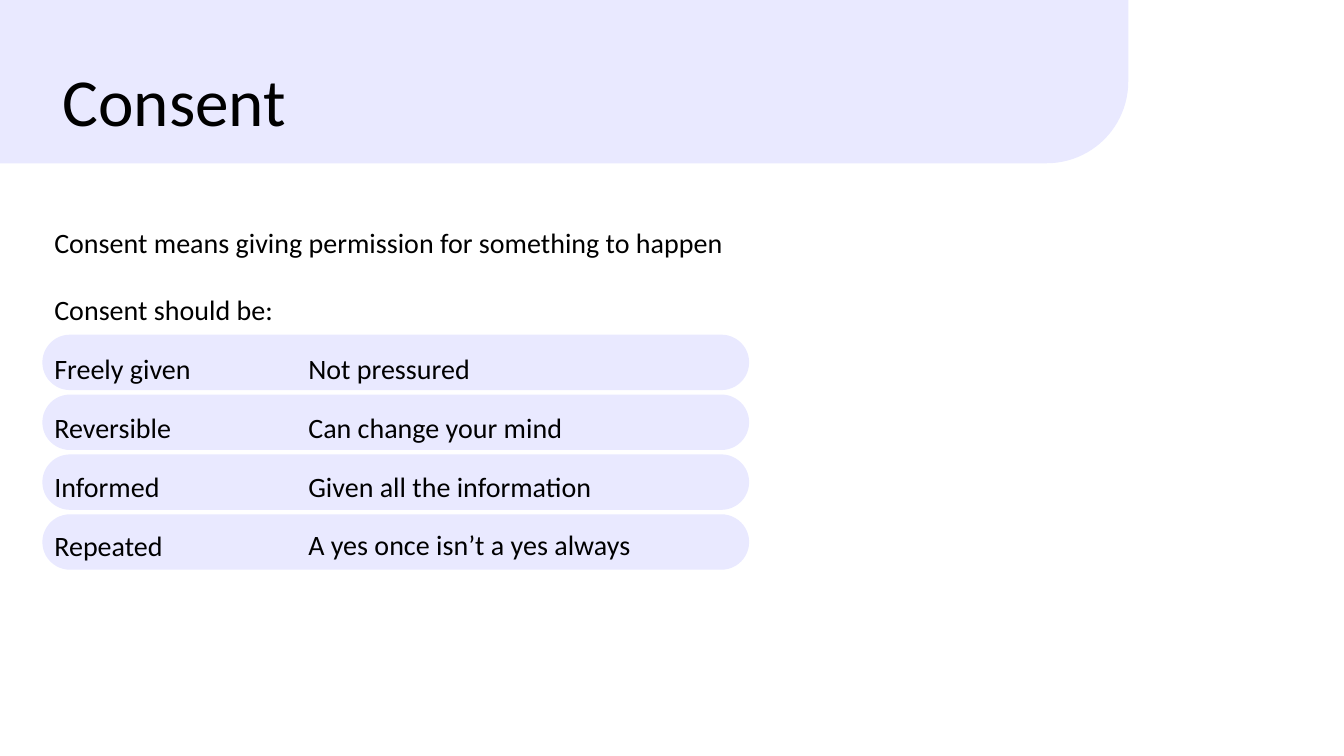
from pptx import Presentation
from pptx.dml.color import RGBColor
from pptx.enum import shapes, text
from pptx.util import Inches, Pt

LAVENDER = "E9E9FF"
BLACK = "000000"
FONT = "Calibri"

QUALITIES = [
    ("Freely given", "Not pressured"),
    ("Reversible", "Can change your mind"),
    ("Informed", "Given all the information"),
    ("Repeated", "A yes once isn’t a yes always"),
]


def color(hex_string):
    return RGBColor.from_string(hex_string)


def place(item, left, top, width, height):
    item.left, item.top = Inches(left), Inches(top)
    item.width, item.height = Inches(width), Inches(height)


def add_panel(slide, preset, left, top, width, height):
    panel = slide.shapes.add_shape(
        preset, Inches(left), Inches(top), Inches(width), Inches(height))
    panel.adjustments[0] = 0.5
    panel.shadow.inherit = False
    panel.fill.solid()
    panel.fill.fore_color.rgb = color(LAVENDER)
    panel.line.fill.background()
    return panel


def write(frame, lines, size, line_spacing=1.0, space_after=0):
    frame.word_wrap = True
    frame.auto_size = text.MSO_AUTO_SIZE.NONE
    frame.vertical_anchor = text.MSO_ANCHOR.TOP
    for index, line in enumerate(lines):
        paragraph = frame.add_paragraph() if index else frame.paragraphs[0]
        paragraph.alignment = text.PP_ALIGN.LEFT
        paragraph.line_spacing = line_spacing
        paragraph.space_after = Pt(space_after)
        run = paragraph.add_run()
        run.text = line
        run.font.name = FONT
        run.font.size = Pt(size)
        run.font.color.rgb = color(BLACK)


def add_text(slide, left, top, width, height, lines, **spacing):
    box = slide.shapes.add_textbox(
        Inches(left), Inches(top), Inches(width), Inches(height))
    write(box.text_frame, lines, 20, **spacing)


def main():
    prs = Presentation()
    prs.slide_width, prs.slide_height = Inches(13.33), Inches(7.5)
    slide = prs.slides.add_slide(prs.slide_layouts[5])

    # Banner, rounded at the bottom right, behind the title
    banner = add_panel(slide, shapes.MSO_SHAPE.ROUND_1_RECTANGLE,
                       0, 0, 11.19, 1.62)
    banner._element.spPr.xfrm.set("flipV", "1")
    slide.shapes._spTree.insert(2, banner._element)

    # Title
    title = slide.shapes.title
    place(title, 0.52, 0.54, 8.29, 0.91)
    write(title.text_frame, ["Consent"], 48)

    # One bar behind each quality
    for row in range(len(QUALITIES)):
        add_panel(slide, shapes.MSO_SHAPE.ROUNDED_RECTANGLE,
                  0.42, 3.32 + row * 0.594, 7.01, 0.55)

    # Definition, then the qualities and their meanings
    names, meanings = zip(*QUALITIES)
    loose = {"line_spacing": 1.5, "space_after": 6}
    add_text(slide, 0.44, 2.19, 8.2, 0.77,
             ["Consent means giving permission for something to happen"])
    add_text(slide, 0.44, 2.69, 3.19, 2.9,
             ["Consent should be:", *names], **loose)
    add_text(slide, 2.96, 3.27, 4.23, 2.31, meanings, **loose)

    prs.save("out.pptx")


if __name__ == "__main__":
    main()
